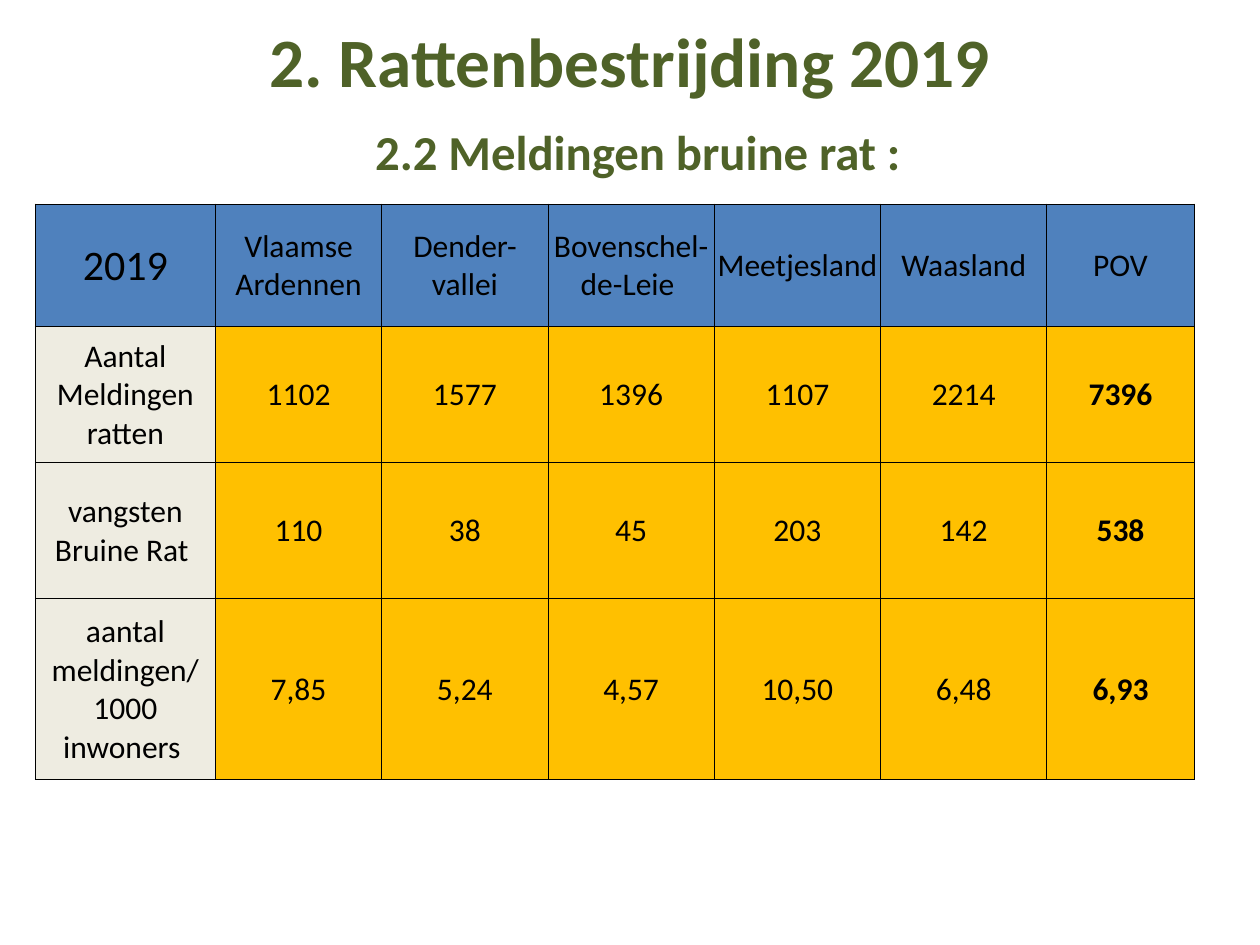
"""Builds the slide on brown rat reports in 2019."""
from lxml import etree
from pptx import Presentation
from pptx.dml.color import RGBColor
from pptx.enum.text import MSO_ANCHOR, MSO_AUTO_SIZE, PP_ALIGN
from pptx.oxml.ns import qn
from pptx.util import Inches, Pt

CENTER = PP_ALIGN.CENTER
MIDDLE = MSO_ANCHOR.MIDDLE
NO_FIT = MSO_AUTO_SIZE.NONE

FONT = "Calibri"
COLORS = {
    "title": "4F6228",
    "text": "000000",
    "border": "000000",
    "header": "4F81BD",
    "label": "EEECE1",
    "value": "FFC000",
}
TITLE = "2. Rattenbestrijding 2019"
SUBTITLE = "2.2 Meldingen bruine rat :"
ROWS = [
    ["2019", "Vlaamse Ardennen", "Dender-vallei", "Bovenschel-de-Leie ",
     "Meetjesland", "Waasland", "POV"],
    ["Aantal Meldingen ratten", "1102", "1577", "1396", "1107", "2214", "7396"],
    ["vangsten Bruine Rat ", "110", "38", "45", "203", "142", "538"],
    ["aantal meldingen/ 1000 inwoners ", "7,85", "5,24", "4,57", "10,50", "6,48", "6,93"],
]
COL_WIDTHS = [1.43] + [1.32] * 5 + [1.17]
ROW_HEIGHTS = [0.97, 1.08, 1.08, 1.44]


def set_font(font, size, color, bold):
    font.name = FONT
    font.size = Pt(size)
    font.bold = bold
    font.color.rgb = RGBColor.from_string(COLORS[color])


def add_borders(cell):
    tcPr = cell._tc.get_or_add_tcPr()
    for side in ("lnL", "lnR", "lnT", "lnB"):
        ln = etree.SubElement(tcPr, qn(f"a:{side}"), w=str(Pt(0.5)))
        fill = etree.SubElement(ln, qn("a:solidFill"))
        etree.SubElement(fill, qn("a:srgbClr"), val=COLORS["border"])


def add_title(slide):
    sp = slide.shapes.title
    sp.left, sp.top, sp.width, sp.height = map(Inches, (0.5, 0.3, 9, 1.01))
    tf = sp.text_frame
    tf.auto_size = NO_FIT
    tf.vertical_anchor = MIDDLE
    p = tf.paragraphs[0]
    p.alignment = CENTER
    set_font(p.font, 39.6, "title", True)
    p.add_run().text = TITLE
    p.add_line_break()
    p.add_run().text = " "
    r = p.add_run()
    r.text = SUBTITLE
    r.font.size = Pt(27.9)


def format_cell(cell, text, row, col):
    cell.text = text
    cell.vertical_anchor = MIDDLE
    cell.margin_left = cell.margin_right = cell.margin_top = Inches(0.01)
    cell.margin_bottom = 0
    add_borders(cell)
    kind = "header" if row == 0 else "label" if col == 0 else "value"
    cell.fill.solid()
    cell.fill.fore_color.rgb = RGBColor.from_string(COLORS[kind])
    p = cell.text_frame.paragraphs[0]
    p.alignment = CENTER
    is_total = row > 0 and col == len(COL_WIDTHS) - 1
    set_font(p.font, 24 if row == col == 0 else 18, "text", is_total)


def add_report_table(slide):
    table = slide.shapes.add_table(
        len(ROWS), len(COL_WIDTHS), Inches(0.28), Inches(1.62),
        Inches(sum(COL_WIDTHS)), Inches(sum(ROW_HEIGHTS))).table
    for column, width in zip(table.columns, COL_WIDTHS):
        column.width = Inches(width)
    for row, height in zip(table.rows, ROW_HEIGHTS):
        row.height = Inches(height)
    for i, texts in enumerate(ROWS):
        for j, text in enumerate(texts):
            format_cell(table.cell(i, j), text, i, j)


def main():
    prs = Presentation()
    prs.slide_width, prs.slide_height = Inches(10), Inches(7.5)
    s = prs.slides.add_slide(prs.slide_layouts[5])
    add_title(s)
    add_report_table(s)
    prs.save("out.pptx")


if __name__ == "__main__":
    main()
